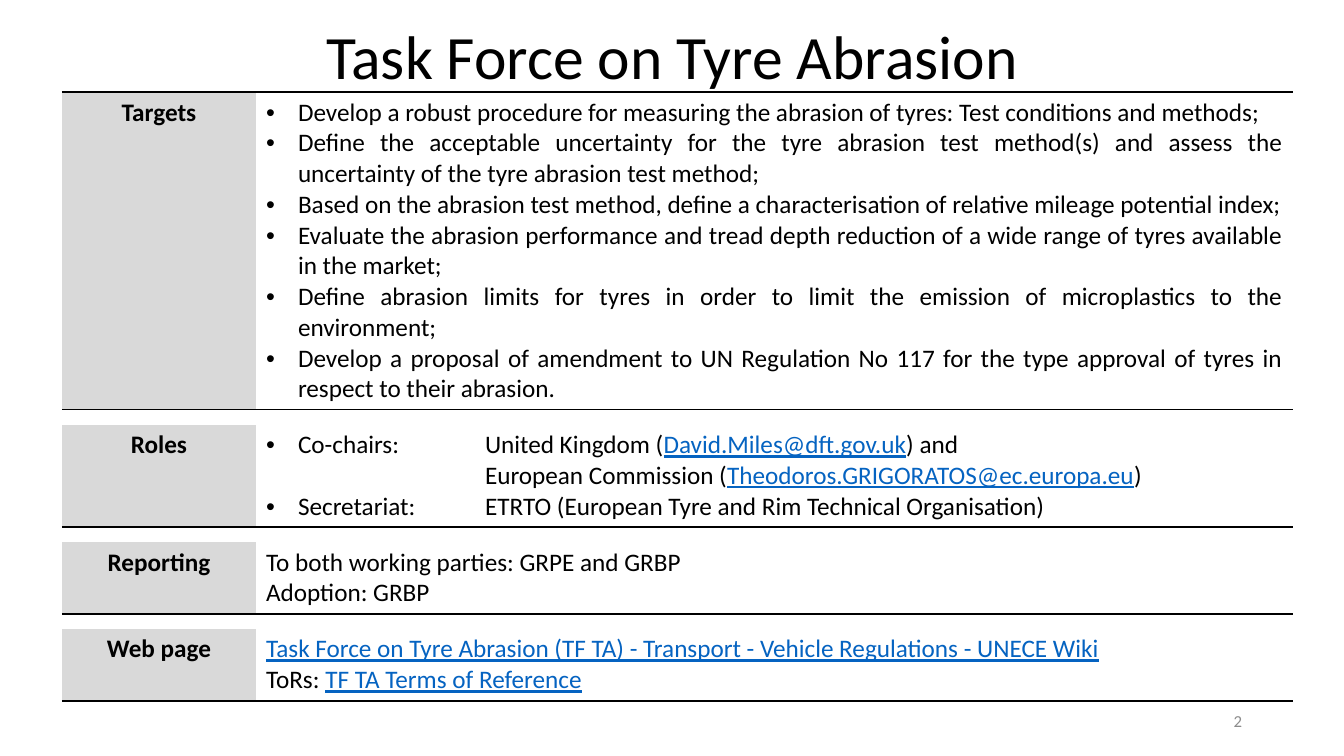
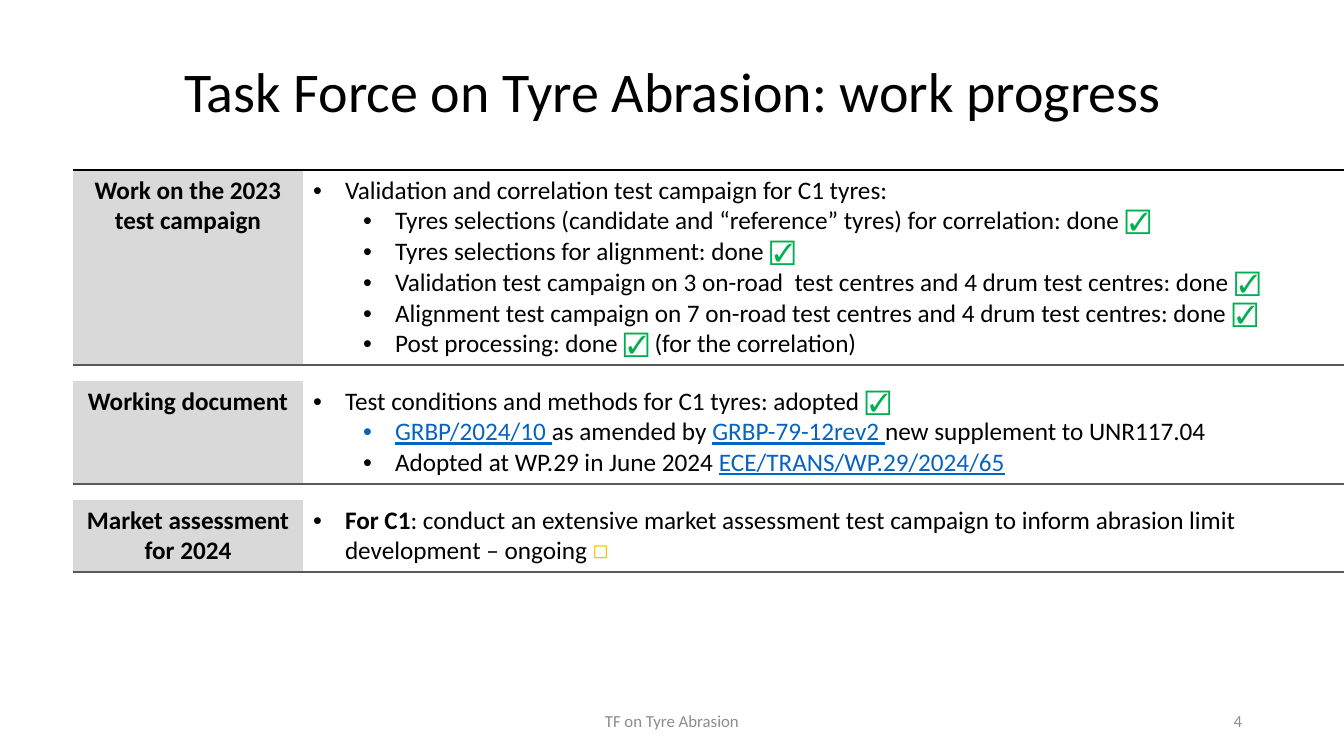
from dataclasses import dataclass
from lxml.etree import SubElement
from pptx import Presentation
from pptx.dml.color import RGBColor
from pptx.enum.text import MSO_ANCHOR as Anchor, MSO_AUTO_SIZE as AutoSize, PP_ALIGN as Align
from pptx.oxml.ns import qn
from pptx.util import Emu, Pt

BLACK = RGBColor(0x00, 0x00, 0x00)
WHITE = RGBColor(0xFF, 0xFF, 0xFF)
LABEL_GREY = RGBColor(0xD9, 0xD9, 0xD9)
RULE_GREY = RGBColor(0x59, 0x59, 0x59)
FOOTER_GREY = RGBColor(0x8C, 0x8C, 0x8C)
LINK_BLUE = RGBColor(0x05, 0x63, 0xC1)
DONE_GREEN = RGBColor(0x00, 0xB0, 0x50)
ONGOING_AMBER = RGBColor(0xFF, 0xC0, 0x00)

FONT = "Calibri"
PLAIN_TABLE = "{2D5ABB26-0587-4C30-8999-92F81FD0307C}"
HANG = 32
LEVEL_STEP = 50
ROLE_COLUMN = 219


def px(length):
    return Emu(round(length * 914400 / 100.8))


@dataclass
class Span:
    text: str
    color: RGBColor = BLACK
    bold: bool = False
    underline: bool = False


@dataclass
class Line:
    """One paragraph: margin and first-line indent in px, an optional bullet and tab stop."""
    spans: tuple
    align: Align = Align.LEFT
    margin: int = 0
    indent: int = 0
    bullet: bool = False
    tab: int = 0


def link(text):
    return Span(text, LINK_BLUE, underline=True)


def plain(*spans, **options):
    return Line(spans, **options)


def bullet(*spans, level=0, **options):
    return Line(spans, margin=HANG + level * LEVEL_STEP, indent=-HANG, bullet=True, **options)


class Deck:
    def __init__(self):
        self.deck = Presentation()
        self.deck.slide_width, self.deck.slide_height = px(1344), px(756)
        self.page = None

    def add_page(self, title, top, height, size):
        self.page = self.deck.slides.add_slide(self.deck.slide_layouts[5])
        box = self.page.shapes.title
        box.left, box.top, box.width, box.height = px(93), px(top), px(1159), px(height)
        frame = box.text_frame
        frame.auto_size = AutoSize.NONE
        frame.vertical_anchor = Anchor.MIDDLE
        self.set_line(frame.paragraphs[0], plain(title, align=Align.CENTER), size)
        frame.paragraphs[0].line_spacing = 0.9

    def add_footer(self, text, left, width, align):
        box = self.page.shapes.add_textbox(px(left), px(701), px(width), px(40))
        frame = box.text_frame
        frame.word_wrap = True
        frame.vertical_anchor = Anchor.MIDDLE
        self.set_line(frame.paragraphs[0], plain(Span(text, FOOTER_GREY), align=align), 12)

    def add_page_number(self, number):
        self.add_footer(str(number), 950, 302, Align.RIGHT)

    def set_line(self, para, line, size):
        para.alignment = line.align
        props = para._p.get_or_add_pPr()
        props.set("marL", str(px(line.margin)))
        props.set("indent", str(px(line.indent)))
        if line.bullet:
            SubElement(props, qn("a:buFont"), typeface="Arial")
            SubElement(props, qn("a:buChar"), char="•")
        if line.tab:
            tabs = SubElement(props, qn("a:tabLst"))
            SubElement(tabs, qn("a:tab"), pos=str(px(line.tab)), algn="l")
        para.font.name, para.font.size = FONT, Pt(size)
        for item in line.spans:
            span = item if isinstance(item, Span) else Span(item)
            run = para.add_run()
            run.text = span.text
            run.font.color.rgb = span.color
            run.font.bold = span.bold
            run.font.underline = span.underline

    def add_table(self, left, top, columns, sections, gap, rule):
        """Stack (label, height, lines) sections with an empty row between neighbours."""
        heights = []
        for _, height, _ in sections:
            heights += [height, gap]
        heights.pop()
        frame = self.page.shapes.add_table(len(heights), len(columns), px(left), px(top),
                                           px(sum(columns)), px(sum(heights)))
        table = frame.table
        table.first_row = table.horz_banding = False
        table._tbl.tblPr.find(qn("a:tableStyleId")).text = PLAIN_TABLE
        for column, width in zip(table.columns, columns):
            column.width = px(width)
        for row, height in zip(table.rows, heights):
            row.height = px(height)
        for index in range(len(heights)):
            cells = table.rows[index].cells
            if index % 2:
                for cell in cells:
                    self.empty_cell(cell)
                continue
            label, _, lines = sections[index // 2]
            heading = plain(Span(label, bold=True), align=Align.CENTER)
            borders = {"a:lnB": rule}
            if index == 0:
                borders["a:lnT"] = BLACK
            self.fill_cell(cells[0], [heading], LABEL_GREY, borders)
            self.fill_cell(cells[1], lines, None, borders)

    def fill_cell(self, cell, lines, color, borders):
        if color is None:
            cell.fill.background()
        else:
            cell.fill.solid()
            cell.fill.fore_color.rgb = color
        frame = cell.text_frame
        for index, line in enumerate(lines):
            para = frame.add_paragraph() if index else frame.paragraphs[0]
            self.set_line(para, line, 18)
        props = cell._tc.get_or_add_tcPr()
        for side, rule in borders.items():
            border = SubElement(props, qn(side), w=str(Pt(1)))
            paint = SubElement(border, qn("a:solidFill"))
            SubElement(paint, qn("a:srgbClr"), val=str(rule))
            props.insert(0, border)

    def empty_cell(self, cell):
        cell.fill.solid()
        cell.fill.fore_color.rgb = WHITE
        cell.margin_top = cell.margin_bottom = 0
        SubElement(cell.text_frame.paragraphs[0]._p, qn("a:endParaRPr"), sz="500")


def build_overview(deck):
    targets = [
        "Develop a robust procedure for measuring the abrasion of tyres: Test conditions and methods;",
        "Define the acceptable uncertainty for the tyre abrasion test method(s) and assess the "
        "uncertainty of the tyre abrasion test method;",
        "Based on the abrasion test method, define a characterisation of relative mileage potential index;",
        "Evaluate the abrasion performance and tread depth reduction of a wide range of tyres available "
        "in the market;",
        "Define abrasion limits for tyres in order to limit the emission of microplastics to the environment;",
        "Develop a proposal of amendment to UN Regulation No 117 for the type approval of tyres in "
        "respect to their abrasion.",
    ]
    roles = [
        bullet("Co-chairs:\tUnited Kingdom (", link("David.Miles@dft.gov.uk"), ") and", tab=ROLE_COLUMN),
        plain("European Commission (", link("Theodoros.GRIGORATOS@ec.europa.eu"), ")", margin=ROLE_COLUMN),
        bullet("Secretariat:\tETRTO (European Tyre and Rim Technical Organisation)", tab=ROLE_COLUMN),
    ]
    reporting = [plain("To both working parties: GRPE and GRBP"), plain("Adoption: GRBP")]
    web_page = [
        plain(link("Task Force on Tyre Abrasion (TF TA) - Transport - Vehicle Regulations - UNECE Wiki")),
        plain("ToRs: ", link("TF TA Terms of Reference")),
    ]
    deck.add_page("Task Force on Tyre Abrasion", 9, 102, 44)
    deck.add_table(62, 92, (194, 1037), [
        ("Targets", 317, [bullet(target, align=Align.JUSTIFY) for target in targets]),
        ("Roles", 102, roles),
        ("Reporting", 72, reporting),
        ("Web page", 72, web_page),
    ], gap=15, rule=BLACK)
    deck.add_page_number(2)


def build_progress(deck):
    done = Span("☑", DONE_GREEN)
    campaign = [
        bullet("Validation and correlation test campaign for C1 tyres:"),
        bullet("Tyres selections (candidate and “reference” tyres) for correlation: done ", done, level=1),
        bullet("Tyres selections for alignment: done ", done, level=1),
        bullet("Validation test campaign on 3 on-road  test centres and 4 drum test centres: done ",
               done, level=1),
        bullet("Alignment test campaign on 7 on-road test centres and 4 drum test centres: done ",
               done, level=1),
        bullet("Post processing: done ", done, " (for the correlation)", level=1),
    ]
    document = [
        bullet("Test conditions and methods for C1 tyres: adopted ", done),
        bullet(link("GRBP/2024/10 "), "as amended by ", link("GRBP-79-12rev2 "),
               "new supplement to UNR117.04", level=1),
        bullet("Adopted at WP.29 in June 2024 ", link("ECE/TRANS/WP.29/2024/65"), level=1),
    ]
    market = [bullet(Span("For C1", bold=True), ": conduct an extensive market assessment test campaign "
                     "to inform abrasion limit development – ongoing ", Span("◻", ONGOING_AMBER))]
    deck.add_page("Task Force on Tyre Abrasion: work progress", 21, 146, 40)
    deck.add_table(73, 170, (230, 1041), [
        ("Work on the 2023 test campaign", 195, campaign),
        ("Working document", 103, document),
        ("Market assessment for 2024", 72, market),
    ], gap=16, rule=RULE_GREY)
    deck.add_footer("TF on Tyre Abrasion", 445, 454, Align.CENTER)
    deck.add_page_number(4)


def main():
    style = Deck()
    build_overview(style)
    build_progress(style)
    style.deck.save("out.pptx")


if __name__ == "__main__":
    main()
